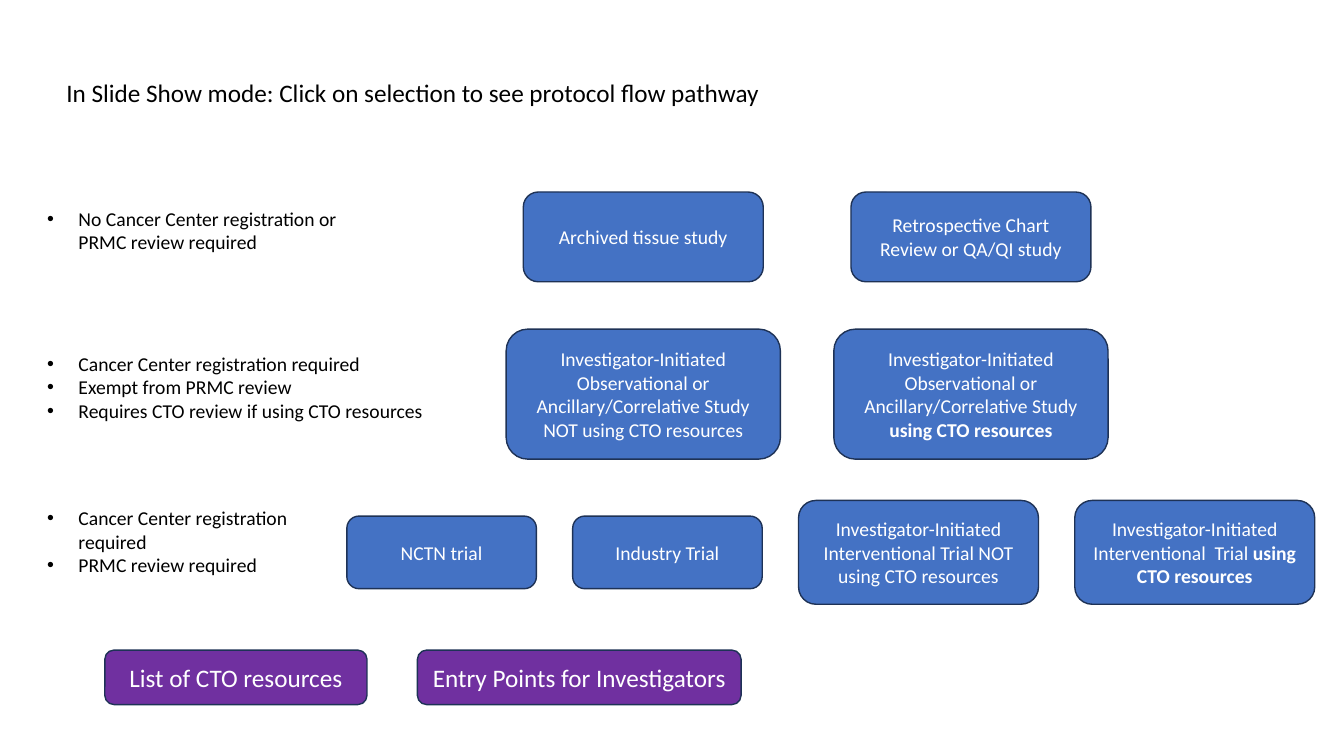
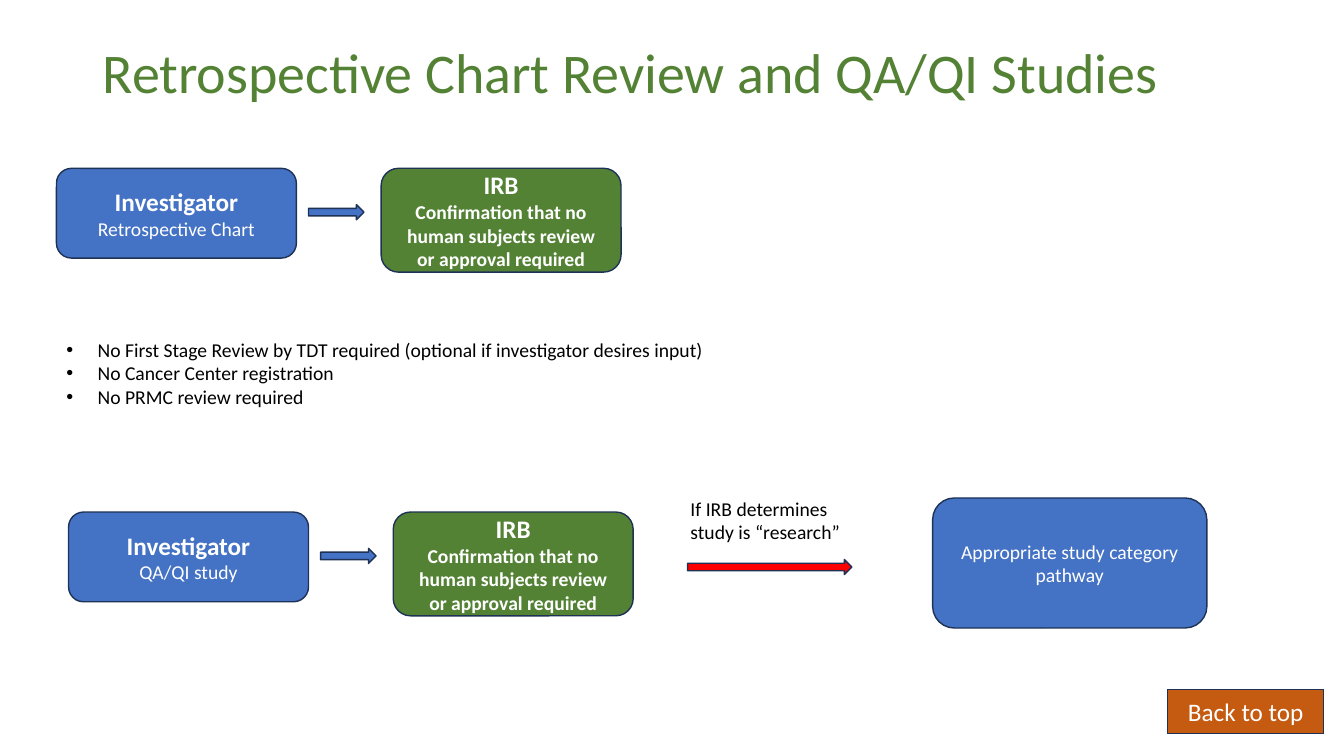
from lxml.etree import SubElement
from pptx import Presentation
from pptx.dml.color import RGBColor
from pptx.enum.shapes import MSO_SHAPE as Kind
from pptx.enum.text import MSO_ANCHOR as Anchor, MSO_AUTO_SIZE as Auto, PP_ALIGN as Align
from pptx.oxml.ns import qn
from pptx.util import Inches, Pt

# Shared look
FONT = "Calibri"
BLUE, GREEN, PURPLE, ORANGE, RED = "4472C4", "548235", "7030A0", "C55A11", "FF0000"
EDGE, WHITE, BLACK = "1E3256", "FFFFFF", "000000"
BODY, HEAD, TITLE = 14, 18, 40

# Box sizes: width, height
SMALL, MID, TALL, BIG = (1.88, 0.72), (2.38, 0.89), (2.38, 1.03), (2.72, 1.29)
ARROW = (0.55, 0.15)


def color(code):
    return RGBColor.from_string(code)


def line(plain="", bold="", size=BODY):
    """One paragraph: a plain part, then a bold part."""
    return plain, bold, size


def write(frame, lines, ink, align=Align.LEFT):
    for i, (plain, bold, size) in enumerate(lines):
        para = frame.add_paragraph() if i else frame.paragraphs[0]
        para.alignment = align
        font = para.font
        font.name, font.size = FONT, Pt(size)
        font.color.rgb = color(ink)
        for text, heavy in ((plain, False), (bold, True)):
            if text:
                run = para.add_run()
                run.text = text
                run.font.bold = heavy


def shape(slide, left, top, size, fill, lines=(), kind=Kind.ROUNDED_RECTANGLE):
    item = slide.shapes.add_shape(kind, *map(Inches, (left, top, *size)))
    item.shadow.inherit = False
    item.fill.solid()
    item.fill.fore_color.rgb = color(fill)
    item.line.color.rgb = color(EDGE)
    item.line.width = Pt(1)
    frame = item.text_frame
    frame.word_wrap = True
    frame.vertical_anchor = Anchor.MIDDLE
    write(frame, lines, WHITE, Align.CENTER)


def row(slide, left, mid, gap, fill, boxes):
    """Boxes side by side, centred on one height."""
    for size, text in boxes:
        shape(slide, left, mid - size[1] / 2, size, fill, [text])
        left += size[0] + gap


def note(slide, left, top, size, lines, ink=BLACK, wrap=True):
    box = slide.shapes.add_textbox(*map(Inches, (left, top, *size)))
    frame = box.text_frame
    frame.word_wrap = wrap
    frame.auto_size = Auto.SHAPE_TO_FIT_TEXT
    write(frame, lines, ink)
    return frame


def bullets(slide, left, top, size, texts, wrap=True):
    frame = note(slide, left, top, size, [line(t) for t in texts], wrap=wrap)
    for para in frame.paragraphs:
        props = para._p.get_or_add_pPr()
        props.set("marL", str(Inches(0.31)))
        props.set("indent", str(-Inches(0.31)))
        mark = SubElement(props, qn("a:buChar"))
        mark.set("char", "•")
        face = SubElement(props, qn("a:buFont"))
        face.set("typeface", "Arial")
        props.insert(0, mark)
        props.insert(0, face)


def arrow(slide, left, top, size, fill):
    shape(slide, left, top, size, fill, kind=Kind.RIGHT_ARROW)


def flow(slide, left, top, study):
    """Investigator, arrow, IRB."""
    shape(slide, left, top, MID, BLUE,
          [line(bold="Investigator", size=HEAD), line(study)])
    arrow(slide, left + 2.5, top + 0.36, ARROW, BLUE)
    shape(slide, left + 3.22, top, TALL, GREEN, [
        line(bold="IRB", size=HEAD),
        line(bold="Confirmation that no human subjects review or approval required")])


def menu(slide):
    note(slide, 0.56, 0.72, (7.16, 0.4), [
        line("In Slide Show mode: Click on selection to see protocol flow pathway",
             size=HEAD)], wrap=False)

    # Review needs
    bullets(slide, 0.37, 2, (3.27, 0.57),
            ["No Cancer Center registration or PRMC review required"])
    bullets(slide, 0.37, 3.44, (3.96, 0.81), [
        "Cancer Center registration required",
        "Exempt from PRMC review",
        "Requires CTO review if using CTO resources"], wrap=False)
    bullets(slide, 0.37, 4.97, (2.84, 0.81), [
        "Cancer Center registration required", "PRMC review required"])

    # Study choices
    using = "using CTO resources"
    watch = "Investigator-Initiated Observational or Ancillary/Correlative Study "
    row(slide, 5.19, 2.35, 0.87, BLUE, [
        (MID, line("Archived tissue study")),
        (MID, line("Retrospective Chart Review or QA/QI study"))])
    row(slide, 5.02, 3.91, 0.53, BLUE, [
        (BIG, line(watch + "NOT " + using)),
        (BIG, line(watch, using))])
    row(slide, 3.44, 5.48, 0.36, BLUE, [
        (SMALL, line("NCTN trial")),
        (SMALL, line("Industry Trial")),
        (TALL, line("Investigator-Initiated Interventional Trial NOT " + using)),
        (TALL, line("Investigator-Initiated Interventional  Trial ", using))])

    # Further lists
    row(slide, 1.04, 6.72, 0.5, PURPLE, [
        ((2.6, 0.54), line("List of CTO resources", size=HEAD)),
        ((3.21, 0.54), line("Entry Points for Investigators", size=HEAD))])


def review(slide):
    title = note(slide, 0.92, 0.4, (11.5, 0.81), [
        line("Retrospective Chart Review and QA/QI Studies", size=TITLE)], GREEN)
    title.paragraphs[0].line_spacing = 0.9

    # Two flows
    flow(slide, 0.56, 1.67, "Retrospective Chart")
    bullets(slide, 0.56, 3.3, (6.58, 0.81), [
        "No First Stage Review by TDT required (optional if investigator desires input)",
        "No Cancer Center registration",
        "No PRMC review required"], wrap=False)
    flow(slide, 0.68, 5.08, "QA/QI study")

    # Research branch
    note(slide, 6.75, 4.88, (1.77, 0.57),
         [line("If IRB determines study is “research”")])
    arrow(slide, 6.82, 5.55, (1.63, 0.15), RED)
    shape(slide, 9.25, 4.94, BIG, BLUE, [line("Appropriate study category pathway")])

    shape(slide, 11.58, 6.84, (1.55, 0.44), ORANGE,
          [line("Back to top", size=HEAD)], Kind.RECTANGLE)


def main():
    deck = Presentation()
    deck.slide_width, deck.slide_height = Inches(13.33), Inches(7.5)
    for build in (menu, review):
        build(deck.slides.add_slide(deck.slide_layouts[6]))
    deck.save("out.pptx")


if __name__ == "__main__":
    main()
